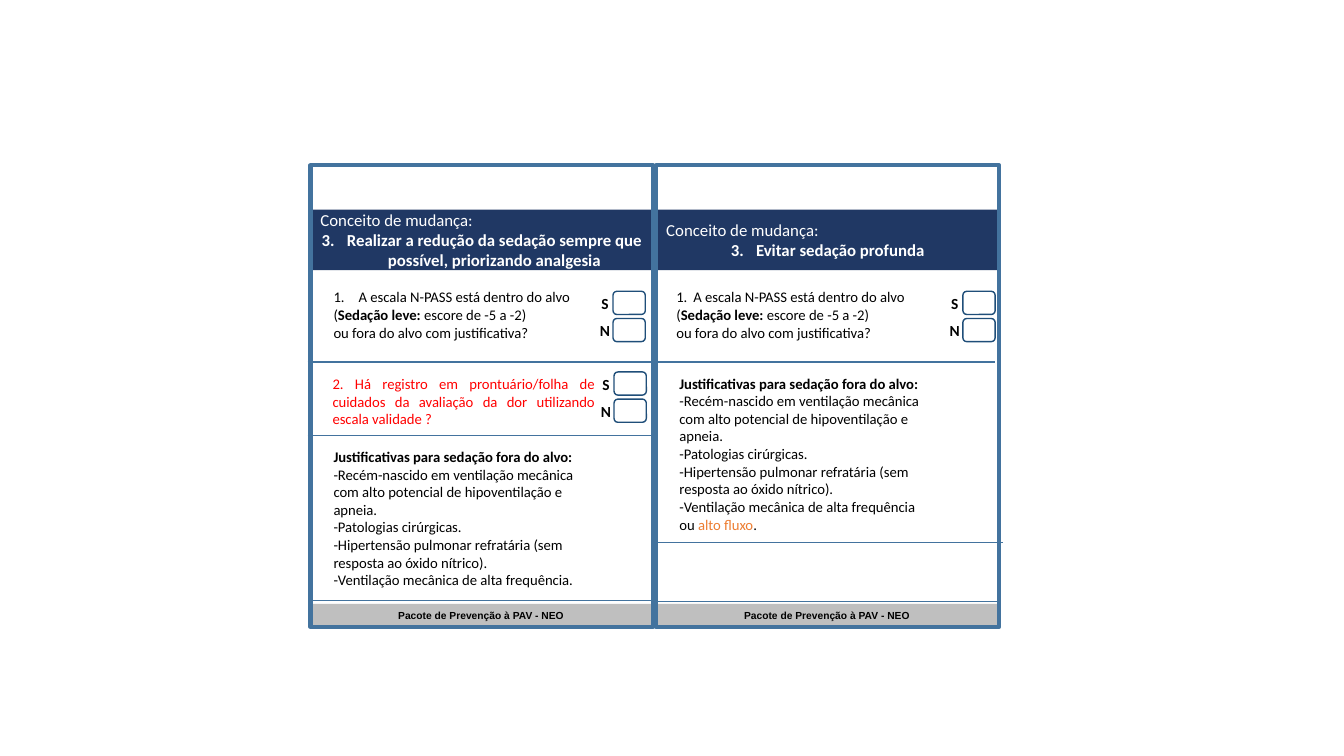
from collections import namedtuple

from lxml import etree
from pptx import Presentation, util as u
from pptx.dml.color import RGBColor
from pptx.enum import shapes, text
from pptx.oxml import ns

COLUMNS, ROWS = 133.3, 75
CELL = u.Inches(0.1)
NAVY, STEEL, OUTLINE, GREY = "203864", "43739E", "1F4E79", "BFBFBF"
BLACK, WHITE, RED, ORANGE = "000000", "FFFFFF", "FF0000", "ED7D31"
LEFT, CENTER, JUSTIFY = text.PP_ALIGN.LEFT, text.PP_ALIGN.CENTER, text.PP_ALIGN.JUSTIFY
LINE_ROWS = 1.78

Box = namedtuple("Box", "left top width height")


def cells(count):
    return u.Emu(round(count * CELL))


def color(value):
    return RGBColor.from_string(value)


def inside(box, left, top, width, height):
    return Box(box.left + left, box.top + top, width, height)


def add_panel(slide, box, fill=None, line=None, weight=1, kind=shapes.MSO_SHAPE.RECTANGLE):
    panel = slide.shapes.add_shape(kind, *map(cells, box))
    panel.shadow.inherit = False
    if fill:
        panel.fill.solid()
        panel.fill.fore_color.rgb = color(fill)
    else:
        panel.fill.background()
    if line:
        panel.line.color.rgb = color(line)
        panel.line.width = u.Pt(weight)
    else:
        panel.line.fill.background()
    return panel


def add_label(slide, box):
    return slide.shapes.add_textbox(*map(cells, box))


def write(holder, paragraphs, size=10.5, font="Calibri", ink=BLACK, bold=False,
          align=LEFT, side=1, top=0.5, bottom=0.5):
    frame = holder.text_frame
    frame.word_wrap = True
    frame.vertical_anchor = text.MSO_ANCHOR.MIDDLE
    frame.margin_left = frame.margin_right = cells(side)
    frame.margin_top, frame.margin_bottom = cells(top), cells(bottom)
    for index, pieces in enumerate(paragraphs):
        paragraph = frame.add_paragraph() if index else frame.paragraphs[0]
        paragraph.alignment = align
        for piece in [pieces] if isinstance(pieces, str) else pieces:
            words, changes = (piece, {}) if isinstance(piece, str) else piece
            run = paragraph.add_run()
            run.text = words
            run.font.name = font
            run.font.size = u.Pt(size)
            run.font.bold = changes.get("bold", bold)
            run.font.color.rgb = color(changes.get("ink", ink))
    return frame.paragraphs


def number_from(paragraph, start):
    properties = paragraph._p.get_or_add_pPr()
    properties.set("marL", str(cells(2.5)))
    properties.set("indent", str(cells(-2.5)))
    font = etree.SubElement(properties, ns.qn("a:buFont"))
    font.set("typeface", "+mj-lt")
    numbering = etree.SubElement(properties, ns.qn("a:buAutoNum"))
    numbering.set("type", "arabicPeriod")
    numbering.set("startAt", str(start))


def set_tab(paragraph, position):
    tabs = etree.SubElement(paragraph._p.get_or_add_pPr(), ns.qn("a:tabLst"))
    tab = etree.SubElement(tabs, ns.qn("a:tab"))
    tab.set("pos", str(cells(position)))
    tab.set("algn", "l")


def add_rule(slide, left, top, width):
    rule = slide.shapes.add_connector(
        shapes.MSO_CONNECTOR.STRAIGHT, *map(cells, (left, top, left + width, top)))
    rule.line.color.rgb = color(STEEL)
    rule.line.width = u.Pt(1)
    etree.SubElement(rule._element.spPr, ns.qn("a:effectLst"))


def add_answers(slide, box):
    for index, letter in enumerate("SN"):
        option = inside(box, 0, 2.7 * index, 3.2, 2.3)
        add_panel(slide, option, line=OUTLINE, kind=shapes.MSO_SHAPE.ROUNDED_RECTANGLE)
        label = add_label(slide, inside(option, -2, 0.4, 2.4, 1.6))
        write(label, [letter], size=11, bold=True, align=CENTER, side=0, top=0, bottom=0)


def add_header(slide, box, concept):
    header = add_panel(slide, box, fill=NAVY)
    intro, item = write(
        header, ["Conceito de mudança:", [(concept, {"bold": True})]], size=12, ink=WHITE)
    item.alignment = CENTER
    number_from(item, 3)


def add_scale_question(slide, box, tab):
    question = write(add_label(slide, box), [
        ["1.\tA escala N-PASS está dentro do alvo (", ("Sedação leve: ", {"bold": True}),
         "escore de -5 a -2)"],
        "ou fora do alvo com justificativa?",
    ], bottom=0.5 + LINE_ROWS)
    set_tab(question[0], tab)


def add_reasons(slide, box, ventilation):
    write(add_label(slide, box), [
        [("Justificativas para sedação fora do alvo:", {"bold": True})],
        "-Recém-nascido em ventilação mecânica com alto potencial de hipoventilação e apneia.",
        "-Patologias cirúrgicas.",
        "-Hipertensão pulmonar refratária (sem resposta ao óxido nítrico).",
        ventilation,
    ], bottom=0.5 + 2 * LINE_ROWS)


def add_card(slide, box, concept, question_left, tab, answers_left, reasons_top,
             ventilation, rules):
    footer = add_panel(slide, inside(box, -0.1, 43.5, box.width, 2.2), fill=GREY)
    write(footer, ["Pacote de Prevenção à PAV - NEO"], size=7.3, font="Arial",
          bold=True, align=CENTER, top=0, bottom=0)
    add_header(slide, inside(box, 0, 4.4, box.width, 6), concept)
    add_scale_question(slide, inside(box, question_left, 12.5, 28, 6.4), tab)
    add_answers(slide, inside(box, answers_left, 12.5, 3.2, 5))
    add_panel(slide, box, line=STEEL, weight=3)
    add_reasons(slide, inside(box, 1.3, reasons_top, 26.7, 19), ventilation)
    for left, top, width in rules:
        add_rule(slide, box.left + left, box.top + top, width)


def add_pain_question(slide, box):
    question = add_label(slide, inside(box, 1.2, 20.2, 28, 6.4))
    write(question, ["2. Há registro em prontuário/folha de cuidados da avaliação da dor "
                     "utilizando escala validade ?"], ink=RED, align=JUSTIFY)
    add_answers(slide, inside(box, 30.1, 20.5, 3.2, 5))


def main():
    deck = Presentation()
    deck.slide_width, deck.slide_height = cells(COLUMNS), cells(ROWS)
    slide = deck.slides.add_slide(deck.slide_layouts[6])
    reduction = Box(30.8, 16.4, 34, 45.8)
    avoidance = inside(reduction, 34.3, 0, 34, 45.8)
    add_card(slide, reduction,
             "Realizar a redução da sedação sempre que possível, priorizando analgesia",
             question_left=1.3, tab=2.5, answers_left=30, reasons_top=27.3,
             ventilation="-Ventilação mecânica de alta frequência.",
             rules=[(-0.3, 19.5, 34.8), (-0.3, 26.8, 34.4), (0, 43.2, 34.4)])
    add_card(slide, avoidance, "Evitar sedação profunda",
             question_left=1, tab=1.7, answers_left=30.4, reasons_top=20.9,
             ventilation=["-Ventilação mecânica de alta frequência ou ",
                          ("alto fluxo", {"ink": ORANGE}), "."],
             rules=[(0.1, 19.5, 33.5), (0, 37.4, 34.4), (-0.1, 43.3, 34.3)])
    add_pain_question(slide, reduction)
    deck.save("out.pptx")


if __name__ == "__main__":
    main()
